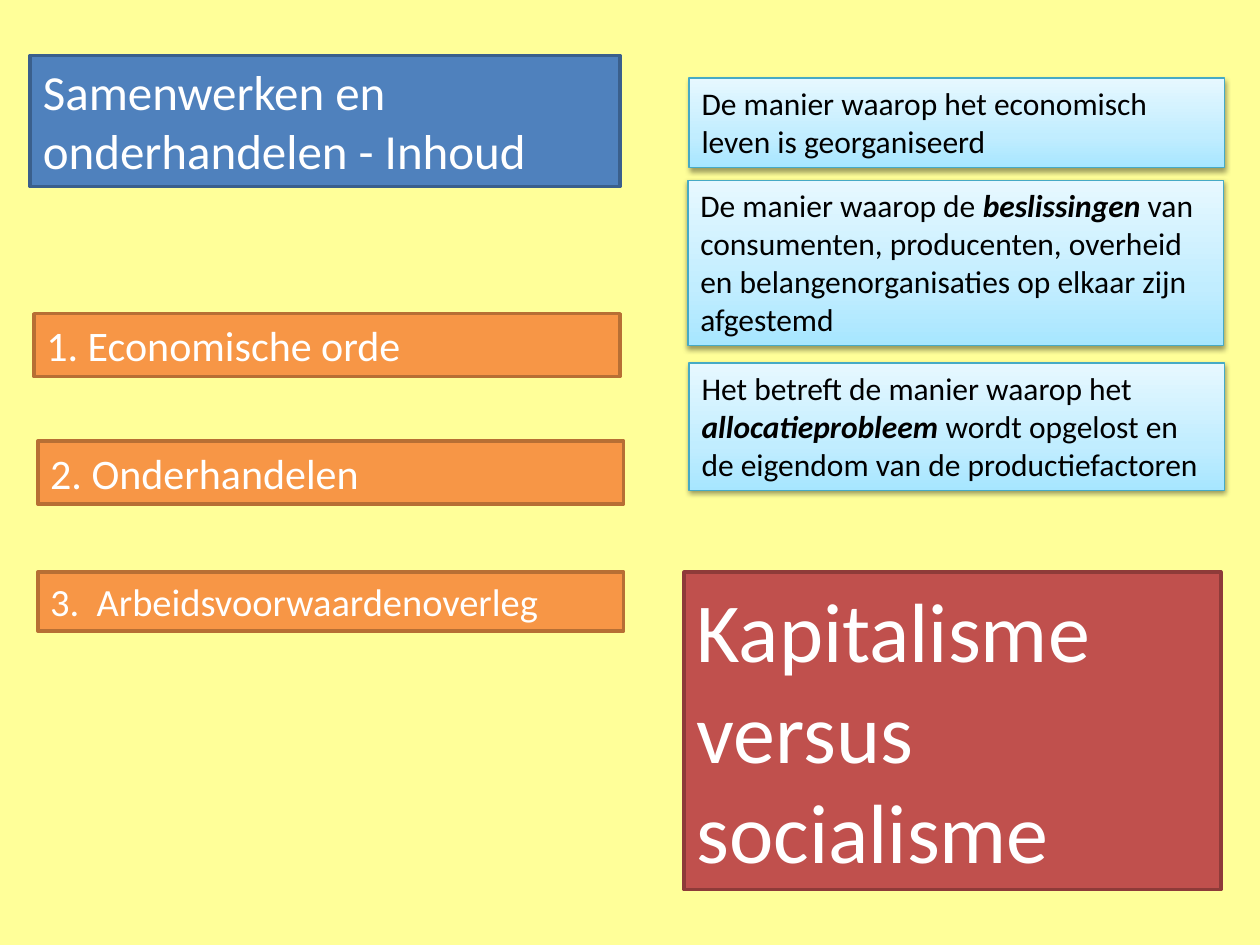
import copy

import pptx
import pptx.dml.color
import pptx.enum.shapes
import pptx.enum.text
import pptx.oxml
import pptx.oxml.ns
import pptx.util

Pt = pptx.util.Pt

COLORS = {
    "background": "FFFF99",
    "blue": "4F81BD", "blue_line": "3A5F8C",
    "orange": "F79646", "orange_line": "B76F34",
    "red": "C0504D", "red_line": "8E3B39",
    "aqua_line": "46AAC5",
    "aqua_deep": "A7E6FF", "aqua_mid": "C1EDFF", "aqua_pale": "E7F8FF",
    "white": "FFFFFF", "black": "000000",
}
AQUA_STOPS = [(0, "aqua_deep"), (0.35, "aqua_mid"), (1, "aqua_pale")]


def rgb(name):
    return pptx.dml.color.RGBColor.from_string(COLORS[name])


def add_text(p, text, size=18, color="white", emphasis=False, font="Calibri"):
    r = p.add_run()
    r.text = text
    r.font.name = font
    r.font.size = Pt(size)
    r.font.bold = r.font.italic = emphasis
    r.font.color.rgb = rgb(color)


class Deck:
    def __init__(self, prs):
        self.slide = prs.slides.add_slide(prs.slide_layouts[5])
        fill = self.slide.background.fill
        fill.solid()
        fill.fore_color.rgb = rgb("background")

    def frame(self, sp, line, width):
        sp.shadow.inherit = False
        sp.line.color.rgb = rgb(line)
        sp.line.width = Pt(width)
        tf = sp.text_frame
        tf.word_wrap = True
        tf.auto_size = pptx.enum.text.MSO_AUTO_SIZE.SHAPE_TO_FIT_TEXT
        tf.vertical_anchor = pptx.enum.text.MSO_ANCHOR.TOP
        p = tf.paragraphs[0]
        p.alignment = pptx.enum.text.PP_ALIGN.LEFT
        return p

    def rectangle(self, left, top, width, height):
        return self.slide.shapes.add_shape(
            pptx.enum.shapes.MSO_SHAPE.RECTANGLE,
            Pt(left), Pt(top), Pt(width), Pt(height))

    def paint(self, sp, text, size, color):
        sp.fill.solid()
        sp.fill.fore_color.rgb = rgb(color)
        add_text(self.frame(sp, color + "_line", 2), text, size=size)

    def title(self, text, left, top, width, height, size, color):
        sp = self.slide.shapes.title
        sp.left, sp.top, sp.width, sp.height = map(Pt, (left, top, width, height))
        self.paint(sp, text, size, color)

    def box(self, text, left, top, width, height, size, color):
        self.paint(self.rectangle(left, top, width, height), text, size, color)

    def note(self, runs, left, top, width, height):
        sp = self.rectangle(left, top, width, height)
        self.gradient(sp)
        p = self.frame(sp, "aqua_line", 0.75)
        self.shadow(sp)
        for i, text in enumerate(runs):
            add_text(p, text, color="black", emphasis=i % 2 == 1)

    def gradient(self, sp):
        sp.fill.gradient()
        sp.fill.gradient_angle = 90
        stops = sp._element.spPr.find(".//" + pptx.oxml.ns.qn("a:gsLst"))
        stops.append(copy.deepcopy(stops[0]))
        for stop, (position, color) in zip(sp.fill.gradient_stops, AQUA_STOPS):
            stop.position = position
            stop.color.rgb = rgb(color)

    def shadow(self, sp):
        effects = sp._element.spPr.find(pptx.oxml.ns.qn("a:effectLst"))
        effects.append(pptx.oxml.parse_xml(
            f'<a:outerShdw {pptx.oxml.ns.nsdecls("a")} blurRad="{Pt(3.1)}" '
            f'dist="{Pt(1.6)}" dir="5400000" rotWithShape="0">'
            f'<a:srgbClr val="{COLORS["black"]}"><a:alpha val="38000"/></a:srgbClr>'
            '</a:outerShdw>'))


def main():
    prs = pptx.Presentation()
    prs.slide_width, prs.slide_height = Pt(720), Pt(540)
    s = Deck(prs)

    s.title("Samenwerken en onderhandelen - Inhoud",
            17.3, 31.7, 337, 74.9, size=28, color="blue")

    topics = [
        ("1. Economische orde", 19.4, 179.3, 36, 24),
        ("2. Onderhandelen", 21.6, 252, 36, 24),
        ("3.  Arbeidsvoorwaardenoverleg", 21.6, 326.9, 33.8, 22),
    ]
    for text, left, top, height, size in topics:
        s.box(text, left, top, 334.8, height, size, "orange")

    notes = [
        (["De manier waarop het economisch leven is georganiseerd"],
         393.8, 44.6, 51.1),
        (["De manier waarop de ", "beslissingen",
          " van consumenten, producenten, overheid en belangenorganisaties"
          " op elkaar zijn afgestemd"],
         393.1, 103, 94.3),
        (["Het betreft de manier waarop het ", "allocatieprobleem",
          " wordt opgelost en de eigendom van de productiefactoren"],
         393.8, 207.4, 72.7),
    ]
    for runs, left, top, height in notes:
        s.note(runs, left, top, 306, height)

    s.box("Kapitalisme versus socialisme",
          391, 326.9, 306.7, 181.4, size=48, color="red")

    prs.save("out.pptx")


if __name__ == "__main__":
    main()
